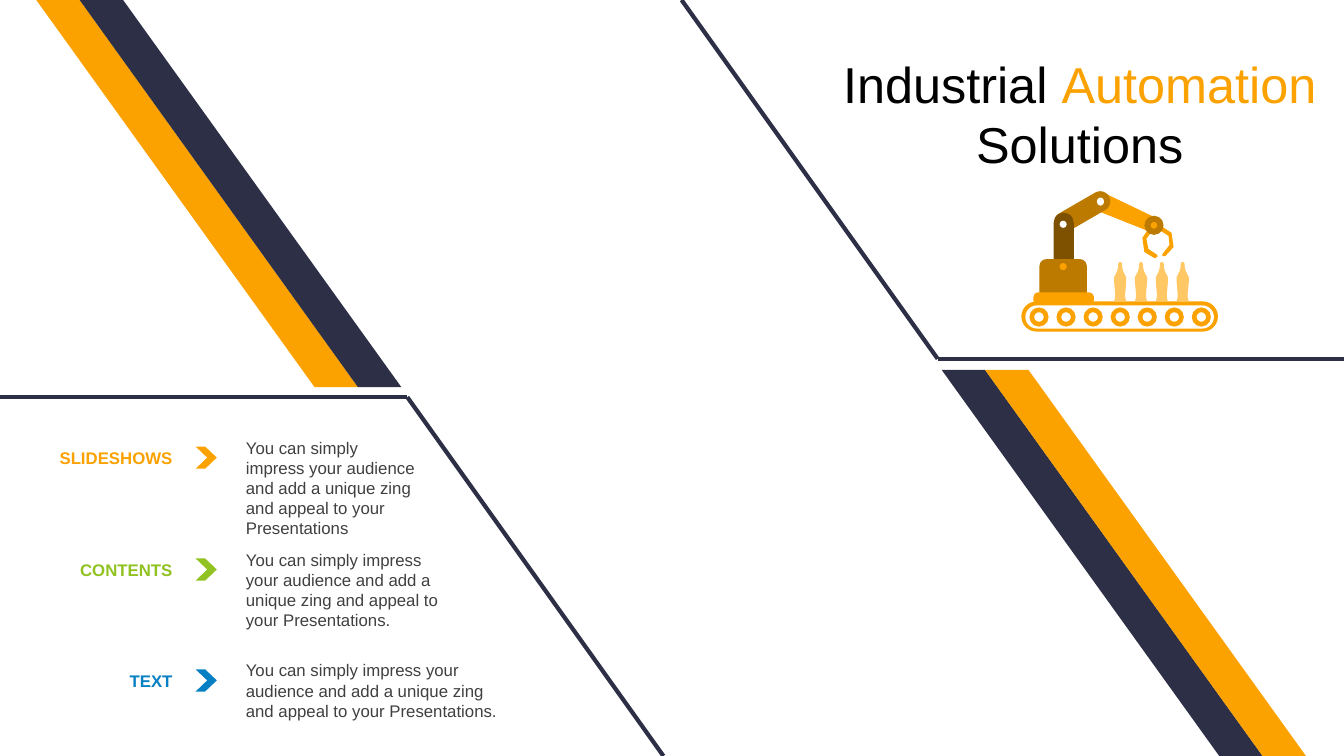
import dataclasses
import lxml.etree
import pptx
import pptx.dml.color
import pptx.enum.shapes
import pptx.enum.text
import pptx.oxml.ns
import pptx.shapes.autoshape
import pptx.shapes.shapetree
import pptx.util

Inches = pptx.util.Inches
Kind = pptx.enum.shapes.MSO_SHAPE
Align = pptx.enum.text.PP_ALIGN
Tree = pptx.shapes.shapetree.SlideShapes | pptx.shapes.shapetree.GroupShapes
Shape = pptx.shapes.autoshape.Shape
Point = tuple[float, float]

COLORS = {
    "navy": "2C2F45", "orange": "FBA200", "brown": "BC7A00", "dark": "7E5100",
    "pale": "FFC864", "white": "FFFFFF", "black": "000000", "gray": "404040",
    "green": "90C221", "blue": "0680C3",
}


@dataclasses.dataclass
class Part:
    kind: Kind
    left: float
    top: float
    width: float
    height: float
    color: str
    adjust: tuple[float, ...] = ()
    turn: float = 0
    flip: bool = False


@dataclasses.dataclass
class Row:
    top: float
    label: str
    text: str
    width: float
    height: float
    color: str


BANDS = [
    Part(Kind.PARALLELOGRAM, left, top, 3.19, 3.84, color, (0.865,), flip=True)
    for left, top, color in [
        (9.34, 3.67, "navy"), (9.77, 3.67, "orange"),
        (0.36, 0, "orange"), (0.79, 0, "navy"),
    ]
]

ELBOWS = [
    [(6.76, 0), (9.3, 3.56), (13.33, 3.56)],
    [(6.58, 7.5), (4.04, 3.94), (0, 3.94)],
]

ARM = [
    Part(Kind.TRAPEZOID, 11.1, 1.81, 0.19, 0.63, "orange", (0.115,), 113.7),
    Part(Kind.ROUNDED_RECTANGLE, 10.43, 2, 0.61, 0.2, "brown", (0.5,), 330),
    Part(Kind.OVAL, 10.88, 1.96, 0.07, 0.08, "white"),
    Part(Kind.ROUND_2_SAME_RECTANGLE, 10.45, 2.11, 0.2, 0.6, "dark", (0.5, 0)),
    Part(Kind.OVAL, 10.51, 2.19, 0.07, 0.07, "white"),
]

CLAWS = [
    [(11.53, 2.25), (11.62, 2.31), (11.64, 2.45), (11.56, 2.54), (11.53, 2.54),
     (11.53, 2.52), (11.6, 2.43), (11.59, 2.34), (11.51, 2.29)],
    [(11.39, 2.27), (11.33, 2.36), (11.35, 2.5), (11.45, 2.56), (11.48, 2.55),
     (11.48, 2.53), (11.39, 2.47), (11.37, 2.37), (11.42, 2.3)],
]

BASE = [
    Part(Kind.DONUT, 11.35, 2.14, 0.19, 0.19, "brown", (0.32,)),
    Part(Kind.ROUND_2_SAME_RECTANGLE, 10.31, 2.57, 0.47, 0.38, "brown", (0.18, 0.06)),
    Part(Kind.ROUND_2_SAME_RECTANGLE, 10.25, 2.9, 0.6, 0.1, "orange", (0.5, 0.2)),
    Part(Kind.OVAL, 10.51, 2.61, 0.07, 0.07, "orange"),
    Part(Kind.ROUNDED_RECTANGLE, 10.13, 2.99, 1.95, 0.3, "orange", (0.5,)),
    Part(Kind.ROUNDED_RECTANGLE, 10.17, 3.03, 1.87, 0.23, "white", (0.5,)),
]

WHEELS = [
    Part(Kind.DONUT, 10.21 + 1.61 / 6 * i, 3.05, 0.19, 0.19, "orange")
    for i in range(7)
]

BOTTLE = [
    (0.01, 2.6), (0.02, 2.62), (0.02, 2.65), (0.03, 2.69), (0.05, 2.73),
    (0.06, 2.75), (0.06, 2.8), (0.05, 2.91), (0.05, 2.95), (0.06, 2.99),
]

CLAIM = "You can simply impress your audience and add a unique zing and appeal to your Presentations"
ROWS = [
    Row(4.39, "SLIDESHOWS", CLAIM, 1.91, 1.11, "orange"),
    Row(5.5, "CONTENTS", CLAIM + ".", 2.22, 0.91, "green"),
    Row(6.6, "TEXT", CLAIM + ".", 2.76, 0.71, "blue"),
]


def tint(name: str) -> pptx.dml.color.RGBColor:
    return pptx.dml.color.RGBColor.from_string(COLORS[name])


def paint(shape: Shape, color: str) -> None:
    shape.shadow.inherit = False
    shape.fill.solid()
    shape.fill.fore_color.rgb = tint(color)
    shape.line.fill.background()


def draw_part(tree: Tree, part: Part) -> None:
    shape = tree.add_shape(
        part.kind, Inches(part.left), Inches(part.top),
        Inches(part.width), Inches(part.height))
    for i, value in enumerate(part.adjust):
        shape.adjustments[i] = value
    shape.rotation = part.turn
    if part.flip:
        shape.element.spPr.xfrm.set("flipH", "1")
    paint(shape, part.color)


def draw_form(tree: Tree, points: list[Point], color: str) -> None:
    spots = [(Inches(x), Inches(y)) for x, y in points]
    form = tree.build_freeform(*spots[0], scale=1.0)
    form.add_line_segments(spots[1:], close=True)
    paint(form.convert_to_shape(), color)


def draw_line(tree: Tree, start: Point, end: Point) -> None:
    line = tree.add_connector(
        pptx.enum.shapes.MSO_CONNECTOR.STRAIGHT,
        *(Inches(value) for value in start + end))
    line.line.color.rgb = tint("navy")
    line.line.width = pptx.util.Pt(3)
    lxml.etree.SubElement(line.element.spPr, pptx.oxml.ns.qn("a:effectLst"))


def draw_text(tree: Tree, left: float, top: float, width: float, height: float,
              runs: list[tuple[str, str]], size: int, align: Align = Align.LEFT,
              bold: bool = False) -> Shape:
    box = tree.add_textbox(Inches(left), Inches(top), Inches(width), Inches(height))
    frame = box.text_frame
    frame.word_wrap = True
    frame.auto_size = pptx.enum.text.MSO_AUTO_SIZE.SHAPE_TO_FIT_TEXT
    line = frame.paragraphs[0]
    line.alignment = align
    line.font.name = "Arial"
    line.font.size = pptx.util.Pt(size)
    line.font.bold = bold
    if len(runs) == 1:
        line.font.color.rgb = tint(runs[0][1])
    for text, color in runs:
        run = line.add_run()
        run.text = text
        if len(runs) > 1:
            run.font.color.rgb = tint(color)
    return box


def draw_robot(tree: Tree) -> None:
    for part in ARM:
        draw_part(tree, part)
    for claw in CLAWS:
        draw_form(tree, claw, "orange")
    for part in BASE + WHEELS:
        draw_part(tree, part)
    for i in range(4):
        mid = 11.11 + 0.62 / 3 * i
        right = [(mid + x, y) for x, y in BOTTLE]
        left = [(mid - x, y) for x, y in reversed(BOTTLE)]
        draw_form(tree, right + left, "pale")


def draw_row(tree: Tree, row: Row) -> None:
    draw_text(tree, 0.15, row.top, 1.66, 0.31, [(row.label, row.color)], 12,
              Align.RIGHT, True)
    draw_text(tree, 2.34, row.top - 0.1, row.width, row.height,
              [(row.text, "gray")], 12)
    draw_part(tree, Part(Kind.CHEVRON, 1.94, row.top + 0.04, 0.21, 0.22,
                         row.color, (0.549,)))


def main() -> None:
    deck = pptx.Presentation()
    deck.slide_width = Inches(13.33)
    deck.slide_height = Inches(7.5)
    tree = deck.slides.add_slide(deck.slide_layouts[6]).shapes
    for band in BANDS:
        draw_part(tree, band)
    for start, bend, end in ELBOWS:
        group = tree.add_group_shape().shapes
        draw_line(group, start, bend)
        draw_line(group, end, bend)
    title = draw_text(
        tree, 8.09, 0.47, 5.24, 1.31,
        [("Industrial ", "black"), ("Automation", "orange"), (" Solutions", "black")],
        36, Align.CENTER)
    title.text_frame.vertical_anchor = pptx.enum.text.MSO_ANCHOR.MIDDLE
    draw_robot(tree.add_group_shape().shapes)
    for row in ROWS:
        draw_row(tree.add_group_shape().shapes, row)
    deck.save("out.pptx")


if __name__ == "__main__":
    main()
